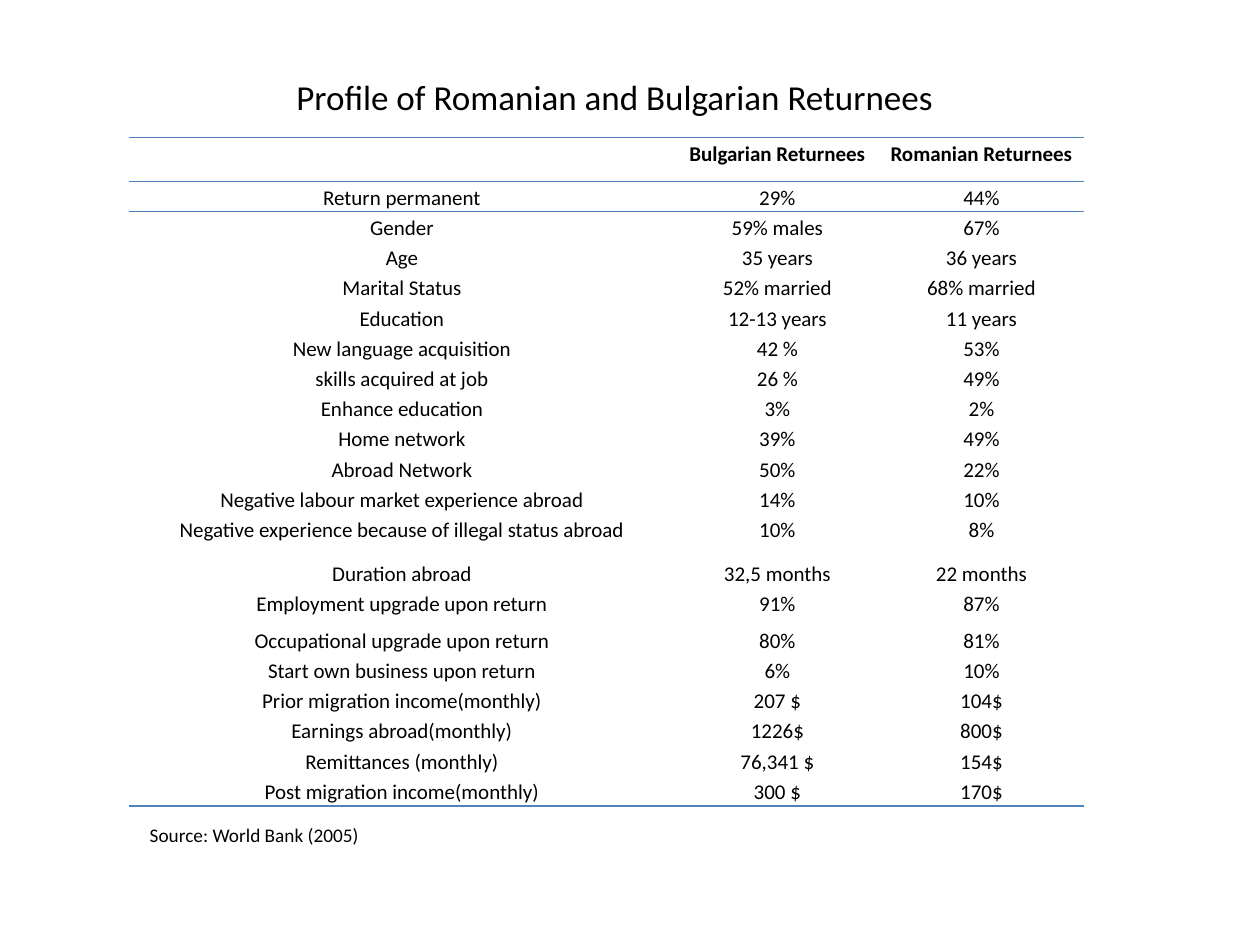
from dataclasses import dataclass

from lxml.etree import SubElement
from pptx import Presentation
from pptx.dml.color import RGBColor
from pptx.enum.text import MSO_ANCHOR, MSO_AUTO_SIZE, PP_ALIGN
from pptx.oxml.ns import qn
from pptx.util import Inches, Pt


@dataclass(frozen=True)
class Theme:
    font: str = "Calibri"
    ink: str = "000000"
    rule: str = "4F81BD"
    rule_width: float = 1
    title_size: float = 20
    table_size: float = 12
    source_size: float = 11
    table_spacing: float = 1.15


THEME = Theme()
PLAIN_TABLE_STYLE = "{2D5ABB26-0587-4C30-8999-92F81FD0307C}"  # no style, no grid

HEADINGS = ("", "Bulgarian Returnees", "Romanian Returnees")
PROFILE = [
    ("Return permanent", "29%", "44%"),
    ("Gender", "59% males", "67%"),
    ("Age", "35 years", "36 years"),
    ("Marital Status", "52% married", "68% married"),
    ("Education", "12-13 years", "11 years"),
    ("New language acquisition", "42 %", "53%"),
    ("skills acquired at job", "26 %", "49%"),
    ("Enhance education", "3%", "2%"),
    ("Home network", "39%", "49%"),
    ("Abroad Network", "50%", "22%"),
    ("Negative labour market experience abroad", "14%", "10%"),
    ("Negative experience because of illegal status abroad", "10%", "8%"),
    ("Duration abroad", "32,5 months", "22 months"),
    ("Employment upgrade upon return", "91%", "87%"),
    ("Occupational upgrade upon return", "80%", "81%"),
    ("Start own business upon return", "6%", "10%"),
    ("Prior migration income(monthly)", "207 $", "104$"),
    ("Earnings abroad(monthly)", "1226$", "800$"),
    ("Remittances (monthly)", "76,341 $", "154$"),
    ("Post migration income(monthly)", "300 $", "170$"),
]
COLUMN_SHARES = (4.34, 1.62, 1.62)
ROW_HEIGHT = 0.24
TALL_ROWS = {0: 0.35, 12: 0.35, 14: 0.29}  # rows that leave a gap below


def apply(target, formats):
    for attribute, value in formats.items():
        setattr(target, attribute, value)


def write(frame, text, size, bold=False, align=PP_ALIGN.LEFT, spacing=1.0):
    """Fill a text frame with one formatted paragraph."""
    paragraph = frame.paragraphs[0]
    paragraph.text = text
    apply(paragraph, {"alignment": align, "line_spacing": spacing})
    apply(paragraph.font, {"name": THEME.font, "size": Pt(size), "bold": bold})
    paragraph.font.color.rgb = RGBColor.from_string(THEME.ink)


def add_rules(cell, edges):
    """Draw the horizontal rules of a cell; edges holds T, B or both in that order."""
    properties = cell._tc.get_or_add_tcPr()
    for edge in edges:
        line = SubElement(properties, qn(f"a:ln{edge}"), w=str(Pt(THEME.rule_width)))
        fill = SubElement(line, qn("a:solidFill"))
        SubElement(fill, qn("a:srgbClr"), val=THEME.rule)


def add_title(slide, left, top, width, height):
    title = slide.shapes.title
    apply(title, {"left": left, "top": top, "width": width, "height": height})
    apply(title.text_frame, {
        "word_wrap": True,
        "auto_size": MSO_AUTO_SIZE.SHAPE_TO_FIT_TEXT,
        "vertical_anchor": MSO_ANCHOR.TOP,
    })
    write(title.text_frame, "Profile of Romanian and Bulgarian Returnees",
          THEME.title_size, align=PP_ALIGN.CENTER)


def add_profile_table(slide, left, top, width, height):
    rows = [HEADINGS, *PROFILE]
    graphic = slide.shapes.add_table(len(rows), len(HEADINGS), left, top, width, height)
    table = graphic.table
    apply(table, {"first_row": False, "horz_banding": False})
    table._tbl.tblPr.find(qn("a:tableStyleId")).text = PLAIN_TABLE_STYLE

    for column, share in zip(table.columns, COLUMN_SHARES):
        column.width = int(width * share / sum(COLUMN_SHARES))

    rules = {0: "TB", 1: "T", len(rows) - 1: "B"}
    for r, values in enumerate(rows):
        table.rows[r].height = Inches(TALL_ROWS.get(r, ROW_HEIGHT))
        for c, value in enumerate(values):
            cell = table.cell(r, c)
            apply(cell, {
                "margin_left": Inches(0.06), "margin_right": Inches(0.06),
                "margin_top": 0, "margin_bottom": 0,
            })
            add_rules(cell, rules.get(r, ""))
            cell.fill.background()
            write(cell.text_frame, value, THEME.table_size, bold=r == 0,
                  align=PP_ALIGN.CENTER, spacing=THEME.table_spacing)


def add_source(slide, left, top, width, height):
    frame = slide.shapes.add_textbox(left, top, width, height).text_frame
    apply(frame, {
        "word_wrap": True,
        "auto_size": MSO_AUTO_SIZE.SHAPE_TO_FIT_TEXT,
        "vertical_anchor": MSO_ANCHOR.MIDDLE,
    })
    write(frame, "Source: World Bank (2005)", THEME.source_size)


def main():
    deck = Presentation()
    apply(deck, {"slide_width": Inches(10), "slide_height": Inches(7.5)})
    slide = deck.slides.add_slide(deck.slide_layouts.get_by_name("Title Only"))

    # Table, source line and title
    add_profile_table(slide, Inches(1.02), Inches(1.09), Inches(7.58), Inches(5.31))
    add_source(slide, Inches(1.09), Inches(6.48), Inches(5.94), Inches(0.29))
    add_title(slide, Inches(1.56), Inches(0.55), Inches(6.64), Inches(0.44))

    deck.save("out.pptx")


if __name__ == "__main__":
    main()
